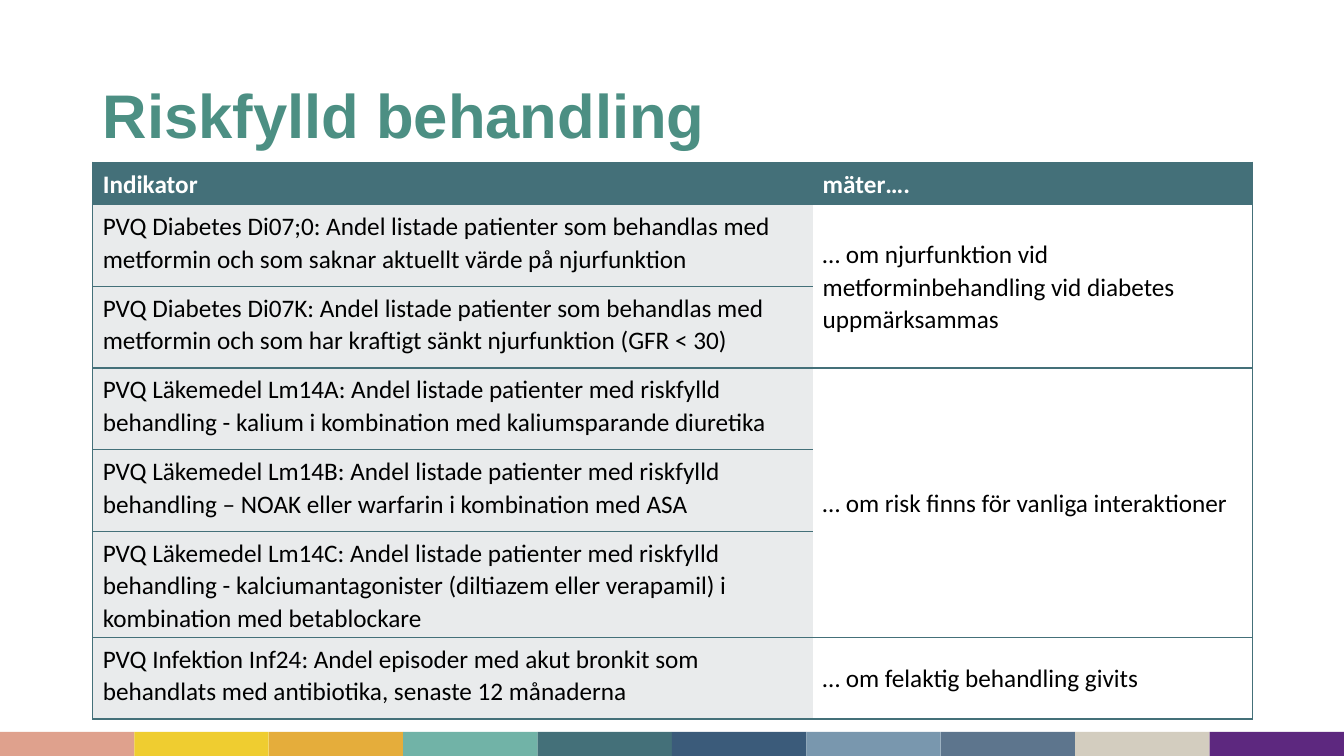
"""Build the slide on indicators for risky treatment."""
from pptx import Presentation, util as u
from pptx.dml.color import RGBColor
from pptx.enum import shapes, text
from pptx.oxml import parse_xml
from pptx.oxml.ns import nsdecls

COLORS = {"title": "4C8F83", "teal": "447079", "pale": "E9EBEC", "white": "FFFFFF", "black": "000000"}
STRIPE = ["DFA18D", "EFCD30", "E5AD3B", "71B3A7", "447079",
          "3B5B7A", "7997AE", "5D758D", "D3CDBF", "5D287F"]
INDICATORS = [
    ("Indikator", "mäter…."),
    ("PVQ Diabetes Di07;0: Andel listade patienter som behandlas med metformin och som saknar aktuellt värde på njurfunktion",
     "… om njurfunktion vid metforminbehandling vid diabetes uppmärksammas"),
    ("PVQ Diabetes Di07K: Andel listade patienter som behandlas med metformin och som har kraftigt sänkt njurfunktion (GFR < 30)", ""),
    ("PVQ Läkemedel Lm14A: Andel listade patienter med riskfylld behandling - kalium i kombination med kaliumsparande diuretika",
     "… om risk finns för vanliga interaktioner"),
    ("PVQ Läkemedel Lm14B: Andel listade patienter med riskfylld behandling – NOAK eller warfarin i kombination med ASA", ""),
    ("PVQ Läkemedel Lm14C: Andel listade patienter med riskfylld behandling - kalciumantagonister (diltiazem eller verapamil) i kombination med betablockare", ""),
    ("PVQ Infektion Inf24: Andel episoder med akut bronkit som behandlats med antibiotika, senaste 12 månaderna",
     "… om felaktig behandling givits"),
]
ROW_HEIGHTS = [0.4, 0.81, 0.81, 0.81, 0.81, 1.03, 0.81]


def add_text(paragraph, words, font, size, color, bold):
    run = paragraph.add_run()
    run.text = words
    run.font.name = font
    run.font.size = u.Pt(size)
    run.font.bold = bold
    run.font.color.rgb = RGBColor.from_string(color)


def add_border(cell, side, visible):
    paint = f'<a:solidFill><a:srgbClr val="{COLORS["teal"]}"/></a:solidFill>' if visible else "<a:noFill/>"
    cell._tc.get_or_add_tcPr().append(
        parse_xml(f'<a:ln{side} {nsdecls("a")} w="12700">{paint}</a:ln{side}>'))


deck = Presentation()
deck.slide_width, deck.slide_height = u.Inches(13.33), u.Inches(7.5)
slide = deck.slides.add_slide(deck.slide_layouts[6])

stripe_width = 13.33 / len(STRIPE)
for i, color in enumerate(STRIPE):
    stripe = slide.shapes.add_shape(shapes.MSO_SHAPE.RECTANGLE, u.Inches(i * stripe_width),
                                    u.Inches(7.26), u.Inches(stripe_width), u.Inches(0.25))
    stripe.shadow.inherit = False
    stripe.fill.solid()
    stripe.fill.fore_color.rgb = RGBColor.from_string(color)
    stripe.line.fill.background()

title = slide.shapes.add_textbox(u.Inches(0.92), u.Inches(0.4), u.Inches(11.5), u.Inches(1.45)).text_frame
title.word_wrap = True
title.vertical_anchor = text.MSO_ANCHOR.MIDDLE
add_text(title.paragraphs[0], "Riskfylld behandling", "Arial", 44, COLORS["title"], True)

indicators = slide.shapes.add_table(len(INDICATORS), 2, u.Inches(0.92), u.Inches(1.61),
                                    u.Inches(11.5), u.Inches(sum(ROW_HEIGHTS))).table
for column, width in zip(indicators.columns, (7.14, 4.36)):
    column.width = u.Inches(width)
for row, height in zip(indicators.rows, ROW_HEIGHTS):
    row.height = u.Inches(height)

for r, entries in enumerate(INDICATORS):
    header = r == 0
    for c, words in enumerate(entries):
        cell = indicators.cell(r, c)
        for side in "LRTB":
            add_border(cell, side, side != "RL"[c])
        cell.fill.solid()
        fill = "teal" if header else ("pale", "white")[c]
        cell.fill.fore_color.rgb = RGBColor.from_string(COLORS[fill])
        if c == 1 and not header:
            cell.vertical_anchor = text.MSO_ANCHOR.MIDDLE
        if words:
            paragraph = cell.text_frame.paragraphs[0]
            paragraph.line_spacing = (1.06, 1.07)[c]
            paragraph.space_after = u.Pt(8)
            add_text(paragraph, words, "Calibri", 18, COLORS["white" if header else "black"], header)

for first, last in ((1, 2), (3, 5)):
    indicators.cell(first, 1).merge(indicators.cell(last, 1))

deck.save("out.pptx")
